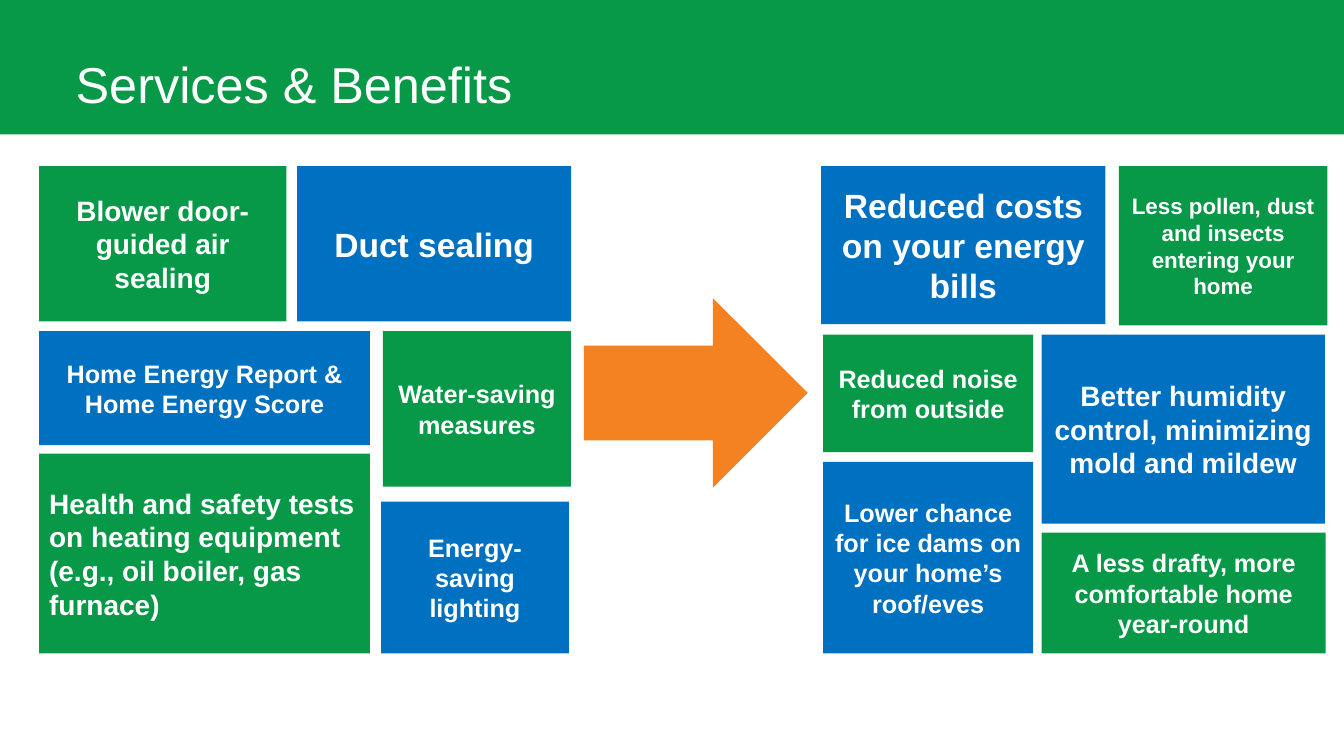
from dataclasses import dataclass

from pptx import Presentation
from pptx.dml.color import RGBColor
from pptx.enum import shapes, text
from pptx.util import Pt

COLORS = {"green": "089948", "blue": "0070C0", "orange": "F58220", "white": "FFFFFF"}
FONT = "Arial"
RECT = shapes.MSO_SHAPE.RECTANGLE
CENTER, LEFT = text.PP_ALIGN.CENTER, text.PP_ALIGN.LEFT


@dataclass
class Tile:
    label: str
    left: float
    top: float
    width: float
    height: float
    color: str
    size: int = 18
    align: text.PP_ALIGN = CENTER


SERVICES = [
    Tile("Blower door-guided air sealing", 28, 118.6, 176.5, 111, "green", 20),
    Tile("Duct sealing", 212.2, 118.6, 195.8, 111, "blue", 24),
    Tile("Home Energy Report & Home Energy Score", 28, 236.6, 236.3, 81.4, "blue"),
    Tile("Water-saving measures", 273.6, 236.6, 134.2, 111, "green"),
    Tile("Health and safety tests on heating equipment (e.g., oil boiler, gas furnace)",
         28, 324, 236.3, 142.7, "green", 20, LEFT),
    Tile("Energy-saving lighting", 272.2, 358.3, 134.2, 108.4, "blue"),
]
BENEFITS = [
    Tile("Reduced costs on your energy bills", 586.6, 118.6, 203, 113, "blue", 24),
    Tile("Less pollen, dust and insects entering your home",
         799.2, 118.6, 149, 113.8, "green", 16),
    Tile("Reduced noise from outside", 588, 239, 150, 84, "green"),
    Tile("Better humidity control, minimizing mold and mildew",
         744, 239, 202.3, 135, "blue", 20),
    Tile("Lower chance for ice dams on your home’s roof/eves", 588, 330, 150, 136.7, "blue"),
    Tile("A less drafty, more comfortable home year-round",
         744, 380.4, 203, 86.3, "green"),
]


def add_block(slide, kind: shapes.MSO_SHAPE, left: float, top: float,
              width: float, height: float, color: str):
    sp = slide.shapes.add_shape(kind, Pt(left), Pt(top), Pt(width), Pt(height))
    sp.shadow.inherit = False
    sp.fill.solid()
    sp.fill.fore_color.rgb = RGBColor.from_string(COLORS[color])
    sp.line.fill.background()
    return sp


def write(sp, label: str, size: int, bold: bool, align: text.PP_ALIGN,
          anchor: text.MSO_ANCHOR) -> None:
    tf = sp.text_frame
    tf.word_wrap = True
    tf.vertical_anchor = anchor
    p = tf.paragraphs[0]
    p.text = label
    p.alignment = align
    p.font.name = FONT
    p.font.size = Pt(size)
    p.font.bold = bold
    p.font.color.rgb = RGBColor.from_string(COLORS["white"])


def add_tile(slide, tile: Tile) -> None:
    sp = add_block(slide, RECT, tile.left, tile.top, tile.width, tile.height, tile.color)
    write(sp, tile.label, tile.size, True, tile.align, text.MSO_ANCHOR.MIDDLE)


def main() -> None:
    prs = Presentation()
    prs.slide_width, prs.slide_height = Pt(960), Pt(540)
    slide = prs.slides.add_slide(prs.slide_layouts[6])

    # Title band
    add_block(slide, RECT, 0, 0, 960, 96, "green")
    title = slide.shapes.add_textbox(Pt(47), Pt(10.8), Pt(864), Pt(74.2))
    write(title, "Services & Benefits", 36, False, LEFT, text.MSO_ANCHOR.BOTTOM)

    # Services lead to benefits
    add_block(slide, shapes.MSO_SHAPE.RIGHT_ARROW, 417, 213, 160, 135.4, "orange")
    for tile in SERVICES + BENEFITS:
        add_tile(slide, tile)

    prs.save("out.pptx")


if __name__ == "__main__":
    main()
